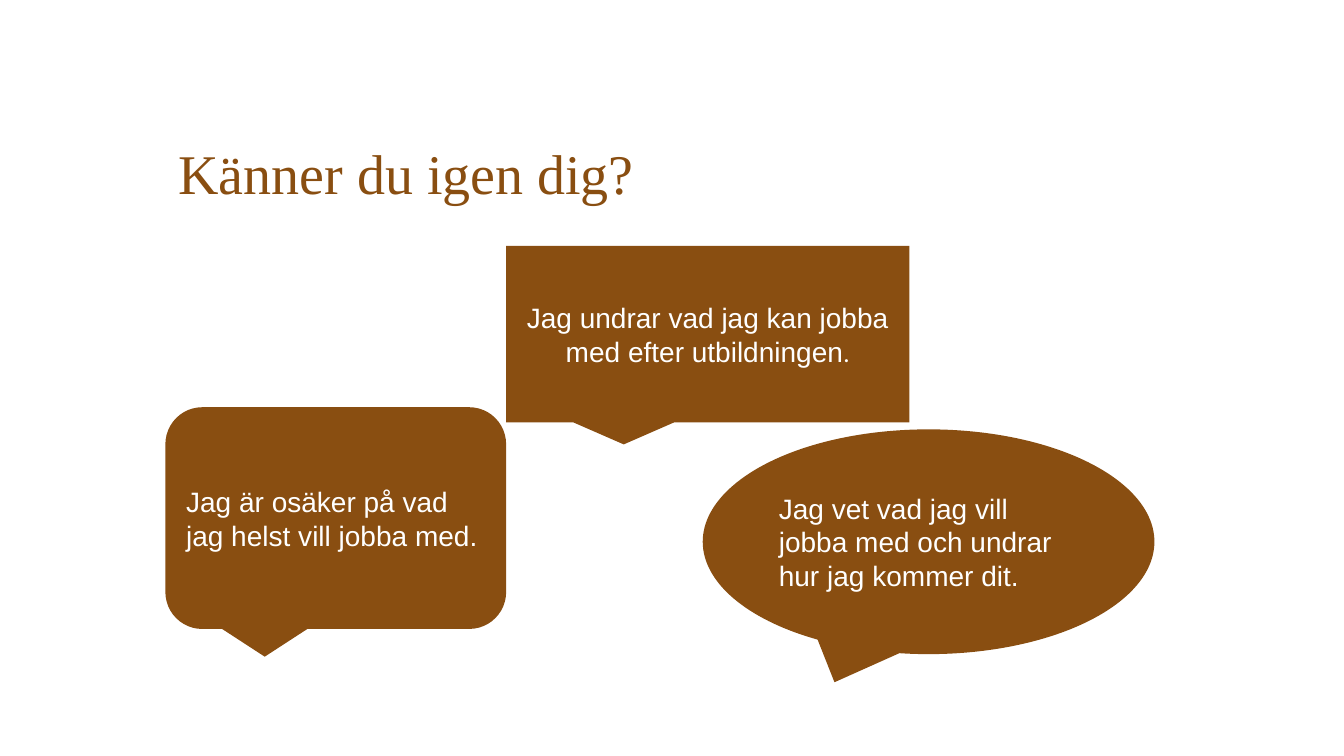
from dataclasses import dataclass

from pptx import Presentation
from pptx.dml.color import RGBColor
from pptx.enum.shapes import MSO_SHAPE
from pptx.enum.text import MSO_ANCHOR, PP_ALIGN
from pptx.slide import Slide
from pptx.util import Inches, Pt

BROWN = "894E11"
WHITE = "FFFFFF"


@dataclass
class Bubble:
    kind: MSO_SHAPE
    left: float
    top: float
    width: float
    height: float
    text: str
    align: PP_ALIGN = PP_ALIGN.LEFT
    stop: str = ""  # closing mark in a smaller font


BUBBLES = [
    Bubble(MSO_SHAPE.RECTANGULAR_CALLOUT, 5.02, 2.44, 4, 1.75,
           "Jag undrar vad jag kan jobba med efter utbildningen",
           PP_ALIGN.CENTER, "."),
    Bubble(MSO_SHAPE.ROUNDED_RECTANGULAR_CALLOUT, 1.64, 4.04, 3.38, 2.2,
           "Jag är osäker på vad jag helst vill jobba med."),
    Bubble(MSO_SHAPE.OVAL_CALLOUT, 6.97, 4.26, 4.48, 2.23,
           "Jag vet vad jag vill jobba med och undrar hur jag kommer dit."),
]


def color(code: str) -> RGBColor:
    return RGBColor.from_string(code)


def style(font, name: str, size: float, code: str) -> None:
    font.name = name
    font.size = Pt(size)
    font.color.rgb = color(code)


def add_title(slide: Slide, text: str) -> None:
    box = slide.shapes.add_textbox(
        Inches(1.77), Inches(0.39), Inches(9.65), Inches(1.97))
    frame = box.text_frame
    frame.word_wrap = True
    frame.vertical_anchor = MSO_ANCHOR.BOTTOM
    frame.margin_left = frame.margin_top = frame.margin_right = 0
    frame.margin_bottom = Inches(0.31)
    para = frame.paragraphs[0]
    para.text = text
    para.line_spacing = 0.9
    style(para.font, "Times New Roman", 40, BROWN)


def add_bubble(slide: Slide, item: Bubble) -> None:
    shape = slide.shapes.add_shape(
        item.kind, Inches(item.left), Inches(item.top),
        Inches(item.width), Inches(item.height))
    shape.shadow.inherit = False
    shape.fill.solid()
    shape.fill.fore_color.rgb = color(BROWN)
    shape.line.fill.background()
    frame = shape.text_frame
    frame.word_wrap = True
    frame.vertical_anchor = MSO_ANCHOR.MIDDLE
    para = frame.paragraphs[0]
    para.text = item.text
    para.alignment = item.align
    style(para.font, "Arial", 20, WHITE)
    if item.stop:
        run = para.add_run()
        run.text = item.stop
        style(run.font, "Calibri", 18, WHITE)


def main() -> None:
    deck = Presentation()
    deck.slide_width = Inches(13.33)
    deck.slide_height = Inches(7.5)
    slide = deck.slides.add_slide(deck.slide_layouts[6])
    add_title(slide, "Känner du igen dig?")
    for item in BUBBLES:
        add_bubble(slide, item)
    deck.save("out.pptx")


if __name__ == "__main__":
    main()
